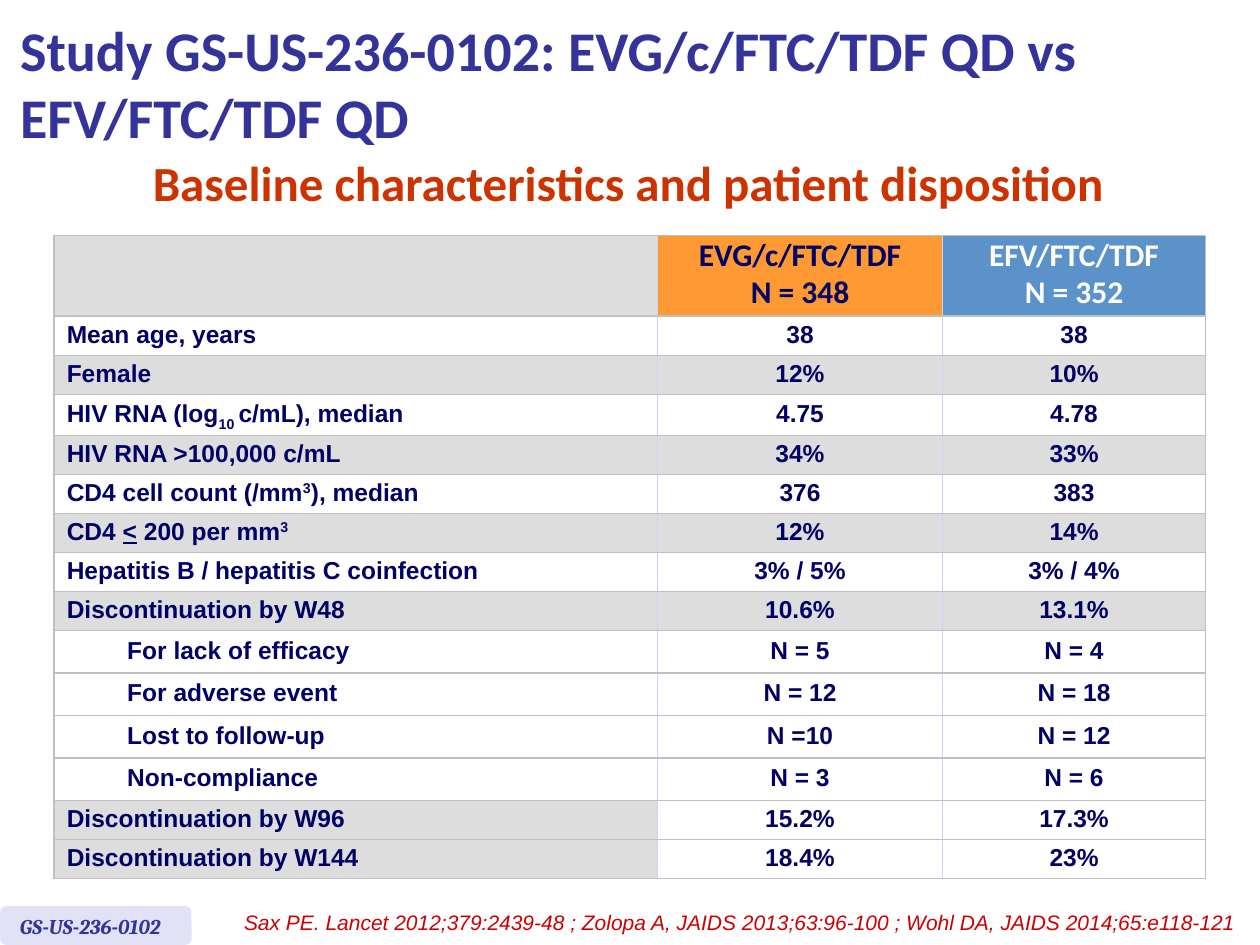
from dataclasses import dataclass

from lxml import etree
from pptx import Presentation
from pptx import util as u
from pptx.dml.color import RGBColor
from pptx.enum import shapes, text
from pptx.oxml import ns

NAVY, INDIGO, WHITE, GREY = "000066", "333399", "FFFFFF", "DDDDDD"
RULE, DIVIDER = "C0C0C0", "D0D0F0"
LEFT, CENTER, RIGHT = text.PP_ALIGN.LEFT, text.PP_ALIGN.CENTER, text.PP_ALIGN.RIGHT


@dataclass
class Style:
    size: float
    font: str
    color: str
    bold: bool = True
    italic: bool = False


@dataclass
class Part:
    words: str
    baseline: int = 0
    underline: bool = False


@dataclass
class Measure:
    label: list[Part]
    evg: str
    efv: str
    label_fill: str = WHITE
    value_fill: str = WHITE
    indented: bool = False


@dataclass
class Caption:
    words: str
    left: float
    top: float
    width: float
    height: float
    style: Style
    align: text.PP_ALIGN = LEFT
    line_spacing: float | u.Length = 1.0


BODY = Style(14, "Arial", NAVY)
MEASURES = [
    Measure([Part("Mean age, years")], "38", "38"),
    Measure([Part("Female")], "12%", "10%", GREY, GREY),
    Measure([Part("HIV RNA (log"), Part("10 ", -25000), Part("c/mL), median")], "4.75", "4.78"),
    Measure([Part("HIV RNA >100,000 c/mL")], "34%", "33%", GREY, GREY),
    Measure([Part("CD4 cell count (/mm"), Part("3", 30000), Part("), median")], "376", "383"),
    Measure([Part("CD4 "), Part("<", underline=True), Part(" 200 per mm"), Part("3", 30000)],
            "12%", "14%", GREY, GREY),
    Measure([Part("Hepatitis B / hepatitis C coinfection")], "3% / 5%", "3% / 4%"),
    Measure([Part("Discontinuation by W48")], "10.6%", "13.1%", GREY, GREY),
    Measure([Part("For lack of efficacy")], "N = 5", "N = 4", indented=True),
    Measure([Part("For adverse event")], "N = 12", "N = 18", indented=True),
    Measure([Part("Lost to follow-up")], "N =10", "N = 12", indented=True),
    Measure([Part("Non-compliance")], "N = 3", "N = 6", indented=True),
    Measure([Part("Discontinuation by W96")], "15.2%", "17.3%", GREY),
    Measure([Part("Discontinuation by W144")], "18.4%", "23%", GREY),
]
CAPTIONS = [
    Caption("Baseline characteristics and patient disposition", 1.07, 1.42, 7.83, 0.31,
            Style(28, "Calibri", "CC3300"), CENTER, u.Pt(15.2)),
    Caption("Sax PE. Lancet 2012;379:2439-48 ; Zolopa A, JAIDS 2013;63:96-100 ; "
            "Wohl DA, JAIDS 2014;65:e118-121", 1.52, 7.17, 8.39, 0.3,
            Style(12, "Arial", "CC0000", False, True), RIGHT),
    Caption("GS-US-236-0102", 0.06, 7.2, 1.41, 0.3, Style(12, "Cambria", INDIGO, True, True)),
]


def rgb(value: str) -> RGBColor:
    return RGBColor.from_string(value)


def format_font(font, style: Style) -> None:
    font.size, font.name = u.Pt(style.size), style.font
    font.bold, font.italic = style.bold, style.italic
    font.color.rgb = rgb(style.color)


def format_paragraph(paragraph, style: Style, align, line_spacing) -> None:
    paragraph.alignment, paragraph.line_spacing = align, line_spacing
    for run in paragraph.runs:
        format_font(run.font, style)


def add_caption(slide, caption: Caption) -> None:
    box = slide.shapes.add_textbox(u.Inches(caption.left), u.Inches(caption.top),
                                   u.Inches(caption.width), u.Inches(caption.height))
    box.text_frame.word_wrap = True
    box.text_frame.text = caption.words
    format_paragraph(box.text_frame.paragraphs[0], caption.style, caption.align, caption.line_spacing)


def paint_cell(cell, fill: str) -> None:
    cell.fill.solid()
    cell.fill.fore_color.rgb = rgb(fill)
    cell.vertical_anchor = text.MSO_ANCHOR.MIDDLE


def write_cell(cell, words: str, style: Style, align, line_spacing: float) -> None:
    cell.text_frame.text = words
    for index, paragraph in enumerate(cell.text_frame.paragraphs):
        format_paragraph(paragraph, style, align, line_spacing)
        if index:
            paragraph.space_before = u.Pt(style.size * 0.2)


def write_label(cell, parts: list[Part]) -> None:
    paragraph = cell.text_frame.paragraphs[0]
    for part in parts:
        run = paragraph.add_run()
        run.text = part.words
        run.font.underline = part.underline
        if part.baseline:
            run.font._element.set("baseline", str(part.baseline))
    format_paragraph(paragraph, BODY, LEFT, 0.9)


def set_empty_size(cell, size: int) -> None:
    end = etree.SubElement(cell.text_frame.paragraphs[0]._p, ns.qn("a:endParaRPr"))
    end.set("sz", str(size * 100))


def set_borders(cell, left: str | None, right: str | None) -> None:
    properties = cell._tc.get_or_add_tcPr()
    sides = {"lnL": left, "lnR": right, "lnT": RULE, "lnB": RULE}
    for position, (side, color) in enumerate(sides.items()):
        line = etree.Element(ns.qn(f"a:{side}"), w=str(u.Pt(1) if color else 0))
        if color:
            solid = etree.SubElement(line, ns.qn("a:solidFill"))
            etree.SubElement(solid, ns.qn("a:srgbClr"), val=color)
        else:
            etree.SubElement(line, ns.qn("a:noFill"))
        properties.insert(position, line)


def add_measures(slide) -> None:
    widths = [0.48, 4.31, 2.26, 2.09]
    heights = [0.64] + [0.31] * len(MEASURES)
    table = slide.shapes.add_table(len(heights), len(widths), u.Inches(0.43), u.Inches(1.87),
                                   u.Inches(sum(widths)), u.Inches(sum(heights))).table
    for column, width in zip(table.columns, widths):
        column.width = u.Inches(width)
    for row, height in zip(table.rows, heights):
        row.height = u.Inches(height)

    table.cell(0, 0).merge(table.cell(0, 1))
    for column, fill in enumerate([GREY, GREY, "FF9933", "5B92C9"]):
        paint_cell(table.cell(0, column), fill)
    write_cell(table.cell(0, 2), "EVG/c/FTC/TDF\nN = 348", Style(18, "Calibri", NAVY), CENTER, 0.8)
    write_cell(table.cell(0, 3), "EFV/FTC/TDF\nN = 352", Style(18, "Calibri", WHITE), CENTER, 0.8)
    set_empty_size(table.cell(0, 0), 14)

    for row, measure in enumerate(MEASURES, 1):
        fills = [measure.label_fill] * 2 + [measure.value_fill] * 2
        for column, fill in enumerate(fills):
            paint_cell(table.cell(row, column), fill)
        if measure.indented:
            set_empty_size(table.cell(row, 0), 14)
        else:
            table.cell(row, 0).merge(table.cell(row, 1))
        write_label(table.cell(row, int(measure.indented)), measure.label)
        write_cell(table.cell(row, 2), measure.evg, BODY, CENTER, 0.9)
        write_cell(table.cell(row, 3), measure.efv, BODY, CENTER, 0.9)

    for row in range(len(heights)):
        merged = table.cell(row, 0).is_merge_origin
        verticals = [RULE, None, DIVIDER, DIVIDER, RULE]
        for column in range(len(widths)):
            right = DIVIDER if merged and column == 0 else verticals[column + 1]
            set_borders(table.cell(row, column), verticals[column], right)


def add_study_tag(slide) -> None:
    tag = slide.shapes.add_shape(shapes.MSO_SHAPE.ROUNDED_RECTANGLE, u.Inches(0), u.Inches(7.19),
                                 u.Inches(1.52), u.Inches(0.31))
    tag.shadow.inherit = False
    tag.fill.solid()
    tag.fill.fore_color.rgb = rgb("E2E2F6")
    tag.line.fill.background()


def set_title(slide) -> None:
    title = slide.shapes.title
    title.left, title.top = u.Inches(0.06), u.Inches(0.05)
    title.width, title.height = u.Inches(9.55), u.Inches(1.21)
    frame = title.text_frame
    frame.text = "Study GS-US-236-0102: EVG/c/FTC/TDF QD vs EFV/FTC/TDF QD"
    frame.auto_size = text.MSO_AUTO_SIZE.NONE
    frame.vertical_anchor = text.MSO_ANCHOR.MIDDLE
    format_paragraph(frame.paragraphs[0], Style(32, "Calibri", INDIGO), LEFT, 1.0)


def main() -> None:
    deck = Presentation()
    deck.slide_width, deck.slide_height = u.Inches(10), u.Inches(7.5)
    slide = deck.slides.add_slide(deck.slide_layouts[5])
    set_title(slide)
    add_measures(slide)
    add_study_tag(slide)
    for caption in CAPTIONS:
        add_caption(slide, caption)
    deck.save("out.pptx")


if __name__ == "__main__":
    main()
